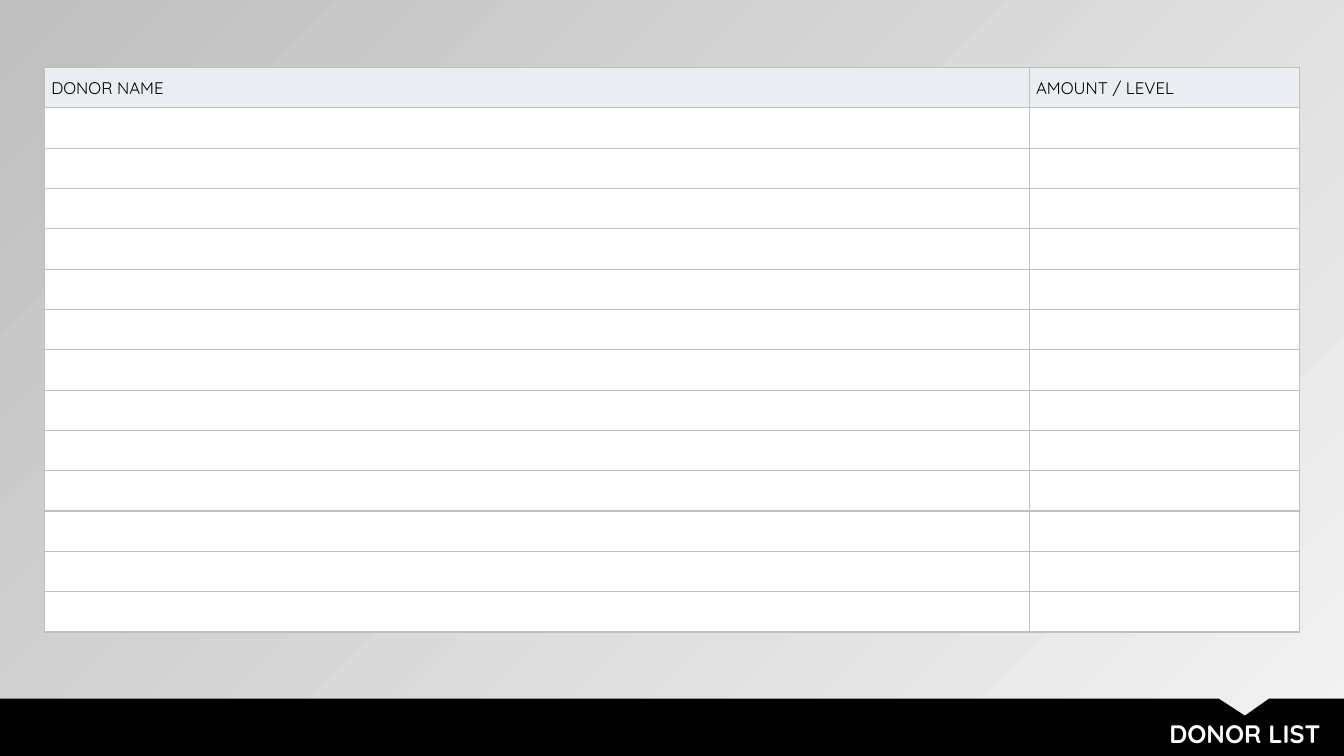
"""Build the donor list slide: a two-column table above a notched title band."""
from lxml import etree
from pptx import Presentation
from pptx.dml.color import RGBColor
from pptx.enum import text
from pptx.oxml import ns
from pptx.util import Pt

SLIDE_SIZE = (960, 540)
FONT = "Quicksand"
TITLE = "DONOR LIST"
TITLE_BOX = (298.08, 509.76, 652.32, 28.8)
HEADINGS = ["DONOR NAME", "AMOUNT / LEVEL"]
COLUMN_WIDTHS = [703.44, 192.96]
BLANK_ROWS = 13
ROW_HEIGHT = 28.8
TABLE_CORNER = (31.68, 48.24)
BAND = [(0, 499), (870.5, 499), (889.2, 511.2), (906.5, 499),
        (960, 499), (960, 540), (0, 540)]
BACKDROP = ["F2F2F2", "BFBFBF"]
BORDER, HEADING_FILL, ROW_FILL = "BFBFBF", "EAEEF3", "FFFFFF"
BLACK, WHITE = "000000", "FFFFFF"


def paint(color, value):
    color.rgb = RGBColor.from_string(value)


def fill_solid(fill, value):
    fill.solid()
    paint(fill.fore_color, value)


def style_font(font, size, value, bold=False):
    font.name, font.size, font.bold = FONT, Pt(size), bold
    paint(font.color, value)


def add_borders(cell):
    properties = cell._tc.get_or_add_tcPr()
    for position, side in enumerate(("lnL", "lnR", "lnT", "lnB")):
        line = etree.Element(ns.qn(f"a:{side}"), w=str(Pt(1)))
        solid = etree.SubElement(line, ns.qn("a:solidFill"))
        etree.SubElement(solid, ns.qn("a:srgbClr"), val=BORDER)
        properties.insert(position, line)


def add_backdrop(slide):
    fill = slide.background.fill
    fill.gradient()
    fill.gradient_angle = 135
    for stop, value in zip(fill.gradient_stops, BACKDROP):
        paint(stop.color, value)


def add_donor_table(slide):
    rows = [HEADINGS] + [[""] * len(HEADINGS)] * BLANK_ROWS
    size = (sum(COLUMN_WIDTHS), ROW_HEIGHT * len(rows))
    donors = slide.shapes.add_table(
        len(rows), len(HEADINGS), *map(Pt, TABLE_CORNER + size)).table
    donors.first_row = donors.horz_banding = False
    for column, width in zip(donors.columns, COLUMN_WIDTHS):
        column.width = Pt(width)
    for r, entries in enumerate(rows):
        donors.rows[r].height = Pt(ROW_HEIGHT)
        for c, entry in enumerate(entries):
            cell = donors.cell(r, c)
            cell.text = entry
            cell.vertical_anchor = text.MSO_ANCHOR.MIDDLE
            cell.margin_left = cell.margin_right = Pt(5)
            cell.margin_top = cell.margin_bottom = 0
            paragraph = cell.text_frame.paragraphs[0]
            for part in (paragraph, *paragraph.runs):
                style_font(part.font, 12, BLACK)
            fill_solid(cell.fill, ROW_FILL if r else HEADING_FILL)
            add_borders(cell)


def add_band(slide):
    corners = [(Pt(x), Pt(y)) for x, y in BAND]
    outline = slide.shapes.build_freeform(*corners[0])
    outline.add_line_segments(corners[1:], close=True)
    band = outline.convert_to_shape()
    band.shadow.inherit = False
    fill_solid(band.fill, BLACK)
    band.line.fill.background()


def place_title(slide):
    title = slide.shapes.title
    title.left, title.top, title.width, title.height = map(Pt, TITLE_BOX)
    frame = title.text_frame
    frame.text = TITLE
    frame.word_wrap = True
    frame.auto_size = text.MSO_AUTO_SIZE.SHAPE_TO_FIT_TEXT
    frame.vertical_anchor = text.MSO_ANCHOR.TOP
    paragraph = frame.paragraphs[0]
    paragraph.alignment = text.PP_ALIGN.RIGHT
    style_font(paragraph.runs[0].font, 18, WHITE, bold=True)
    title.element.getparent().append(title.element)


def main():
    deck = Presentation()
    deck.slide_width, deck.slide_height = map(Pt, SLIDE_SIZE)
    slide = deck.slides.add_slide(deck.slide_layouts.get_by_name("Title Only"))
    add_backdrop(slide)
    add_donor_table(slide)
    add_band(slide)
    place_title(slide)
    deck.save("out.pptx")


if __name__ == "__main__":
    main()
